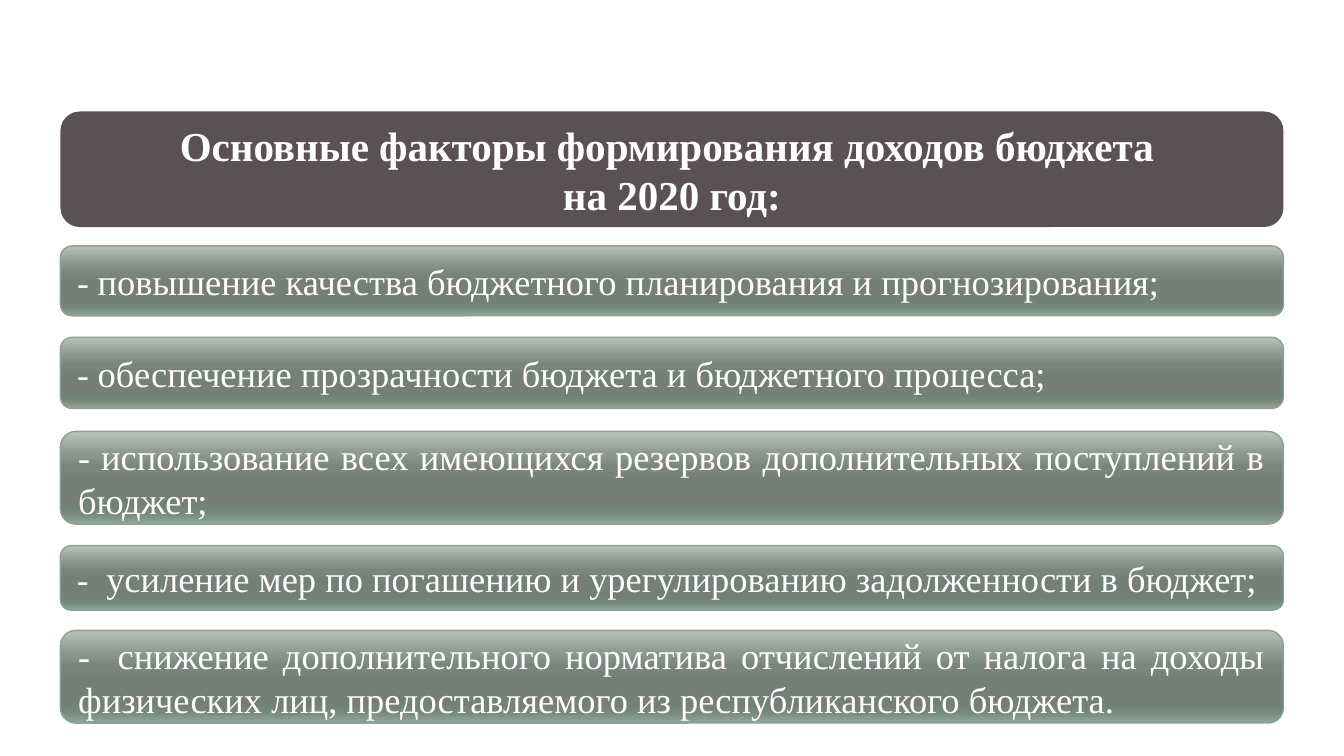
from dataclasses import dataclass

from lxml.etree import SubElement
from pptx import Presentation
from pptx.dml.color import RGBColor
from pptx.enum.shapes import MSO_SHAPE
from pptx.enum.text import MSO_ANCHOR, PP_ALIGN
from pptx.oxml.ns import qn
from pptx.util import Inches, Pt


@dataclass(frozen=True)
class Theme:
    font: str = "Times New Roman"
    text: str = "FFFFFF"
    heading: str = "5A5155"
    edge: str = "8F9F96"
    glass: tuple = ((0, "B6C3BB"), (25, "8B9890"), (38, "79867E"), (55, "728078"),
                    (80, "708176"), (88, "75887C"), (100, "91A79A"))
    heading_size: float = 22
    dash_size: float = 19
    factor_size: float = 19.5
    edge_width: float = 0.75


class FactorSlide:
    """Draws a heading and factor bars on one slide in a shared theme."""

    def __init__(self, slide, theme, left, width):
        self.slide, self.theme = slide, theme
        self.left, self.width = left, width

    def bar(self, top, height):
        bar = self.slide.shapes.add_shape(
            MSO_SHAPE.ROUNDED_RECTANGLE, Inches(self.left), Inches(top),
            Inches(self.width), Inches(height))
        bar.shadow.inherit = False
        frame_format = {"word_wrap": True, "vertical_anchor": MSO_ANCHOR.MIDDLE}
        for name, value in frame_format.items():
            setattr(bar.text_frame, name, value)
        return bar

    def run(self, paragraph, text, size, bold=False):
        run = paragraph.add_run()
        run.text = text
        font_format = {"name": self.theme.font, "size": Pt(size), "bold": bold}
        for name, value in font_format.items():
            setattr(run.font, name, value)
        run.font.color.rgb = RGBColor.from_string(self.theme.text)

    def glass_fill(self, bar):
        bar.fill.gradient()
        bar.fill.gradient_angle = 270
        stops = bar.element.spPr.find(qn("a:gradFill")).find(qn("a:gsLst"))
        for stop in list(stops):
            stops.remove(stop)
        for percent, color in self.theme.glass:
            stop = SubElement(stops, qn("a:gs"), pos=str(percent * 1000))
            SubElement(stop, qn("a:srgbClr"), val=color)

    def heading(self, lines, top, height):
        heading = self.bar(top, height)
        heading.fill.solid()
        heading.fill.fore_color.rgb = RGBColor.from_string(self.theme.heading)
        heading.line.fill.background()
        frame = heading.text_frame
        for index, line in enumerate(lines):
            paragraph = frame.add_paragraph() if index else frame.paragraphs[0]
            paragraph.alignment = PP_ALIGN.CENTER
            self.run(paragraph, line, self.theme.heading_size, bold=True)

    def factor(self, dash, text, top, height):
        factor = self.bar(top, height)
        self.glass_fill(factor)
        factor.line.color.rgb = RGBColor.from_string(self.theme.edge)
        factor.line.width = Pt(self.theme.edge_width)
        paragraph = factor.text_frame.paragraphs[0]
        paragraph.alignment = PP_ALIGN.JUSTIFY
        self.run(paragraph, dash, self.theme.dash_size)
        self.run(paragraph, text, self.theme.factor_size)


HEADING = ("Основные факторы формирования доходов бюджета ", "на 2020 год:")
FACTORS = (
    ("- ", "повышение качества бюджетного планирования и прогнозирования;", 1.83, 0.52),
    ("- ", "обеспечение прозрачности бюджета и бюджетного процесса;", 2.51, 0.53),
    ("- ", "использование всех имеющихся резервов дополнительных поступлений "
           "в бюджет;", 3.21, 0.69),
    ("-  ", "усиление мер по погашению и урегулированию задолженности в бюджет;",
     4.06, 0.48),
    ("-  ", "снижение дополнительного норматива отчислений от налога на доходы "
            "физических лиц, предоставляемого из республиканского бюджета.", 4.69, 0.69),
)


def main():
    presentation = Presentation()
    presentation.slide_width = Inches(10)
    presentation.slide_height = Inches(10 * 9 / 16)
    slide = presentation.slides.add_slide(presentation.slide_layouts[6])
    page = FactorSlide(slide, Theme(), left=0.45, width=9.1)
    page.heading(HEADING, top=0.83, height=0.86)
    for dash, text, top, height in FACTORS:
        page.factor(dash, text, top, height)
    presentation.save("out.pptx")


if __name__ == "__main__":
    main()
